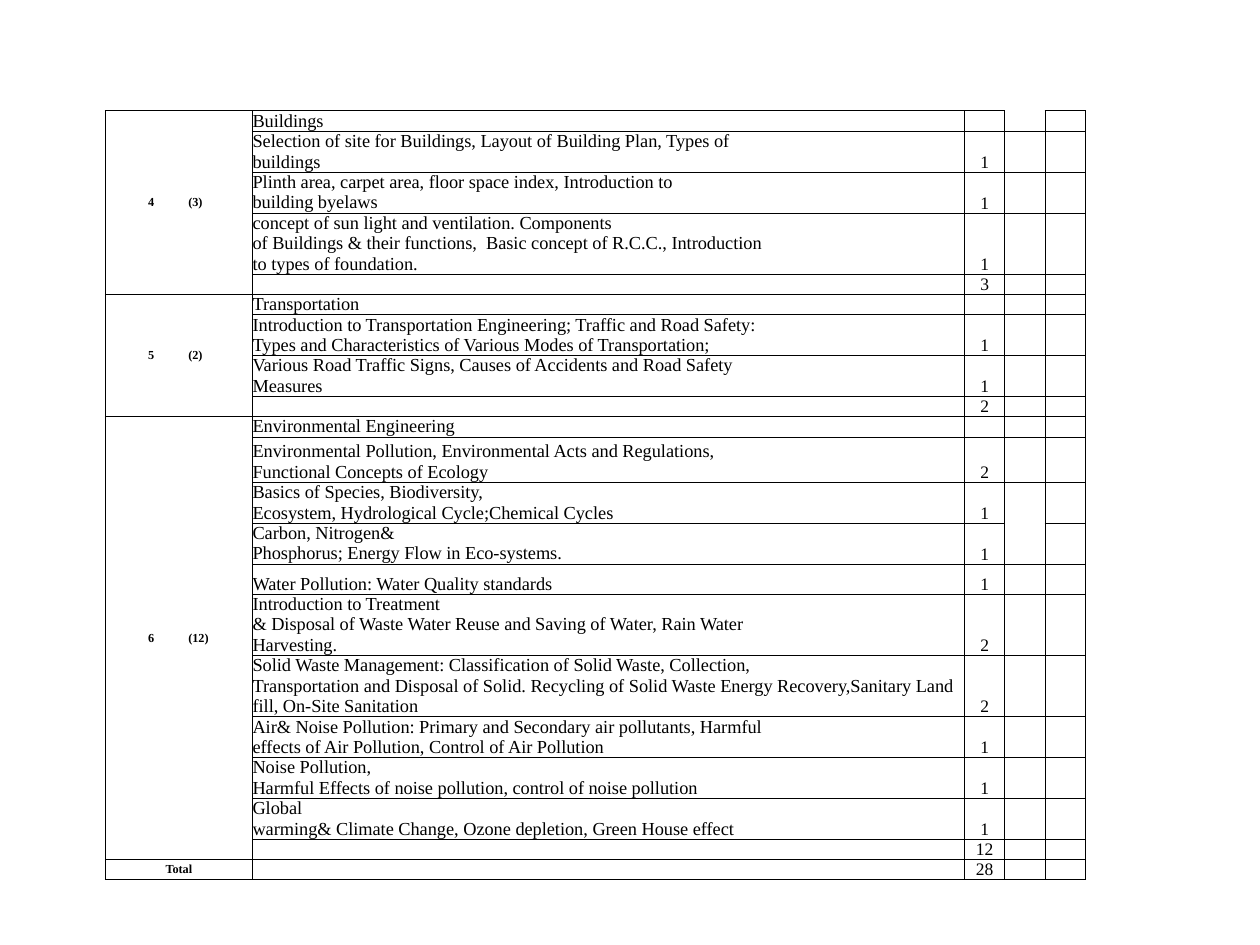
"""Build the syllabus slide: lecture hours for modules 4 to 6 in one table."""
from dataclasses import dataclass

from lxml.etree import SubElement
from pptx import Presentation
from pptx.dml.color import RGBColor
from pptx.enum.text import MSO_ANCHOR as Anchor, PP_ALIGN as Align
from pptx.oxml.ns import qn
from pptx.util import Inches, Pt


@dataclass(frozen=True)
class Theme:
    """Colours, type sizes and the grid unit."""
    font: str = "Times New Roman"
    ink: str = "000000"
    module: float = 7
    topic: float = 10.5
    hours: float = 10
    empty: float = 8
    border: float = 0.5
    unit: float = 0.1
    line: float = 1.6


COLUMNS = (11.7, 56.5, 3.2, 3.2, 3.2)
MODULES = (
    ("4\t(3)", Anchor.TOP, (
        ("Buildings", ""),
        ("Selection of site for Buildings, Layout of Building Plan, Types of\nbuildings", "1"),
        ("Plinth area, carpet area, floor space index, Introduction to\nbuilding byelaws", "1"),
        ("concept of sun light and ventilation. Components\n"
         "of Buildings & their functions,  Basic concept of R.C.C., Introduction\n"
         "to types of foundation.", "1"),
        ("", "3"))),
    ("5\t(2)", Anchor.BOTTOM, (
        ("Transportation", ""),
        ("Introduction to Transportation Engineering; Traffic and Road Safety:\n"
         "Types and Characteristics of Various Modes of Transportation;", "1"),
        ("Various Road Traffic Signs, Causes of Accidents and Road Safety\nMeasures", "1"),
        ("", "2"))),
    ("6\t(12)", Anchor.BOTTOM, (
        ("Environmental Engineering", ""),
        ("Environmental Pollution, Environmental Acts and Regulations,\n"
         "Functional Concepts of Ecology", "2"),
        ("Basics of Species, Biodiversity,\nEcosystem, Hydrological Cycle;Chemical Cycles", "1"),
        ("Carbon, Nitrogen&\nPhosphorus; Energy Flow in Eco-systems.", "1"),
        ("Water Pollution: Water Quality standards", "1"),
        ("Introduction to Treatment\n"
         "& Disposal of Waste Water Reuse and Saving of Water, Rain Water\nHarvesting.", "2"),
        ("Solid Waste Management: Classification of Solid Waste, Collection,\n"
         "Transportation and Disposal of Solid. Recycling of Solid Waste Energy "
         "Recovery,Sanitary Land fill, On-Site Sanitation", "2"),
        ("Air& Noise Pollution: Primary and Secondary air pollutants, Harmful\n"
         "effects of Air Pollution, Control of Air Pollution", "1"),
        ("Noise Pollution,\nHarmful Effects of noise pollution, control of noise pollution", "1"),
        ("Global\nwarming& Climate Change, Ozone depletion, Green House effect", "1"),
        ("", "12"))),
    ("Total", Anchor.BOTTOM, (("", "28"),)),
)
TALL_ROWS = {10: 3.6, 13: 2.4}
OPEN_SIDES = {(0, 3): "T", (11, 3): "B", (12, 3): "T"}


def write(cell, text, theme, size, bold=False, align=Align.LEFT, anchor=Anchor.BOTTOM,
          indent=0, tab=None):
    """Put formatted text into a table cell."""
    cell.margin_left = Inches(indent)
    cell.margin_right = cell.margin_top = cell.margin_bottom = 0
    cell.vertical_anchor = anchor
    paragraph = cell.text_frame.paragraphs[0]
    paragraph.alignment = align
    if tab:
        tabs = SubElement(paragraph._p.get_or_add_pPr(), qn("a:tabLst"))
        SubElement(tabs, qn("a:tab"), pos=str(Inches(tab)), algn="l")
    hundredths = str(int(size * 100))
    if not text:
        SubElement(paragraph._p, qn("a:endParaRPr"), sz=hundredths)
        return
    paragraph.text = text
    for line_break in paragraph._p.findall(qn("a:br")):
        SubElement(line_break, qn("a:rPr"), sz=hundredths)
    for run in paragraph.runs:
        run.font.name, run.font.size, run.font.bold = theme.font, Pt(size), bold
        run.font.color.rgb = RGBColor.from_string(theme.ink)


class SlideBuilder:
    """Hold the theme and the current slide and add elements by grid units."""

    def __init__(self, presentation, theme):
        self.theme = theme
        self.slide = presentation.slides.add_slide(presentation.slide_layouts[6])

    def length(self, units):
        """Turn grid units into a length."""
        return Inches(units * self.theme.unit)

    def border(self, cell, open_sides=""):
        """Rule the sides of a cell, leaving the open ones blank."""
        properties = cell._tc.get_or_add_tcPr()
        for side in "LRTB":
            line = SubElement(properties, qn(f"a:ln{side}"), w=str(Pt(self.theme.border)))
            if side in open_sides:
                SubElement(line, qn("a:noFill"))
            else:
                fill = SubElement(line, qn("a:solidFill"))
                SubElement(fill, qn("a:srgbClr"), val=self.theme.ink)
        cell.fill.background()

    def table(self, left, top, columns, heights):
        """Add a plain table with the given column widths and row heights."""
        frame = self.slide.shapes.add_table(
            len(heights), len(columns), self.length(left), self.length(top),
            self.length(sum(columns)), self.length(sum(heights)))
        table = frame.table
        table.first_row = table.horz_banding = False
        for column, width in zip(table.columns, columns):
            column.width = self.length(width)
        for row, height in zip(table.rows, heights):
            row.height = self.length(height)
        return table

    def module(self, table, first, label, anchor, topics):
        """Fill the rows of one module and merge its label cell."""
        theme, last = self.theme, first + len(topics) - 1
        for number, (topic, hours) in enumerate(topics, first):
            for index, text in enumerate(("", topic, hours, "", "")):
                cell = table.cell(number, index)
                open_sides = OPEN_SIDES.get((number, index), "")
                if index == 0:
                    open_sides = "T" * (number > first) + "B" * (number < last)
                size = theme.topic if index == 1 else theme.hours
                if index or number > first:
                    write(cell, text, theme, size if text else theme.empty,
                          align=Align.CENTER if index == 2 else Align.LEFT,
                          anchor=anchor if index == 1 else Anchor.BOTTOM)
                self.border(cell, open_sides)
        origin = table.cell(first, 0)
        if last > first:
            origin.merge(table.cell(last, 0))
        tabbed = "\t" in label
        write(origin, label, theme, theme.module, bold=True, anchor=Anchor.MIDDLE,
              align=Align.LEFT if tabbed else Align.CENTER,
              indent=0.34 if tabbed else 0, tab=0.32 if tabbed else None)


def row_heights(theme):
    """Give each row the height of its lines of text."""
    topics = [topic for _, _, rows in MODULES for topic, _ in rows]
    return [TALL_ROWS.get(number, theme.line * (topic.count("\n") + 1))
            for number, topic in enumerate(topics)]


def main():
    """Build and save the presentation."""
    theme = Theme()
    presentation = Presentation()
    presentation.slide_width, presentation.slide_height = Inches(10), Inches(7.5)
    builder = SlideBuilder(presentation, theme)
    table = builder.table(8.35, 8.8, COLUMNS, row_heights(theme))
    first = 0
    for label, anchor, topics in MODULES:
        builder.module(table, first, label, anchor, topics)
        first += len(topics)
    presentation.save("out.pptx")


if __name__ == "__main__":
    main()
